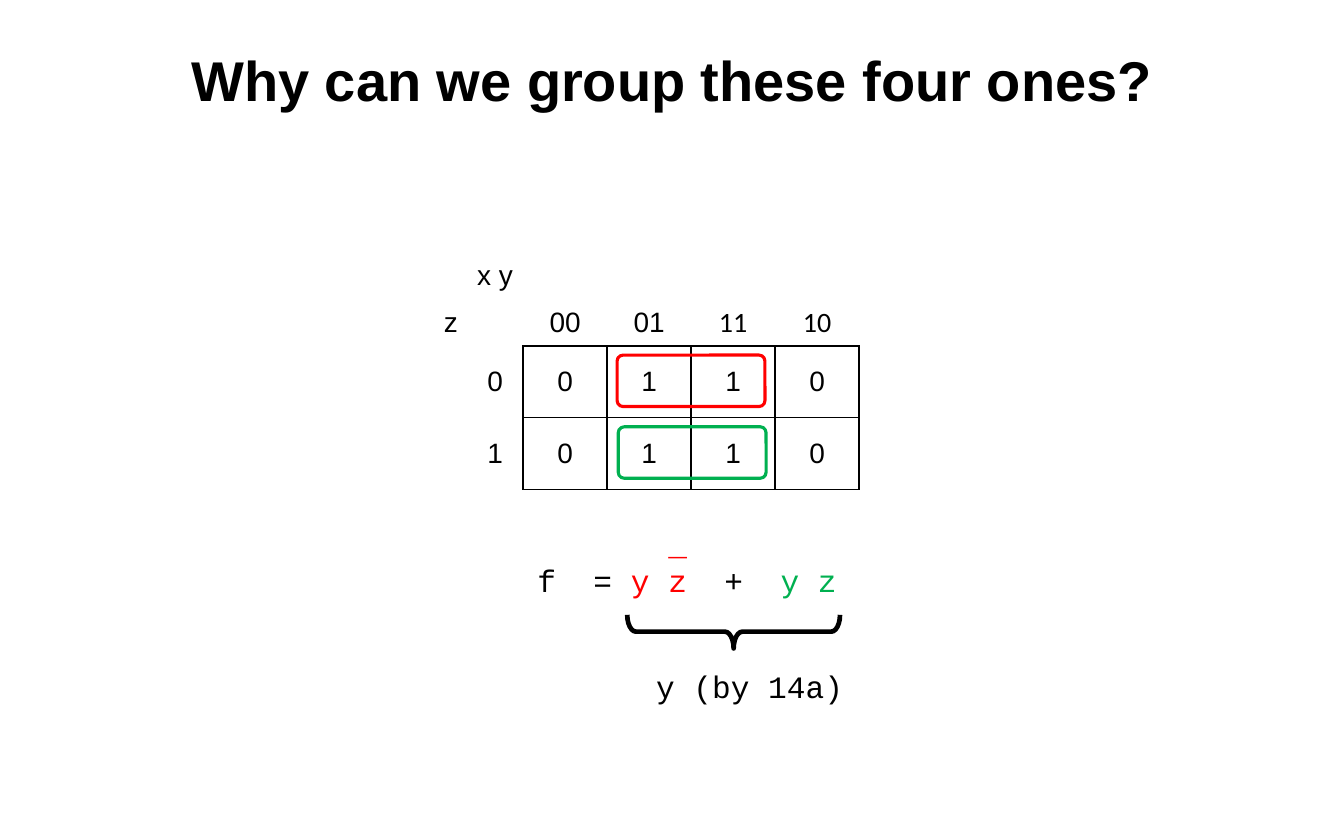
from pptx import Presentation
from pptx.dml.color import RGBColor
from pptx.enum.shapes import MSO_SHAPE as SHAPE
from pptx.enum.text import MSO_ANCHOR as ANCHOR, PP_ALIGN as ALIGN
from pptx.oxml.ns import qn
from pptx.util import Inches, Pt
from lxml.etree import SubElement

BLACK, WHITE, RED, GREEN = "000000", "FFFFFF", "FF0000", "00B050"
TITLE = "Why can we group these four ones?"
MAP = [
    ["", "x y", "", "", "", ""],
    ["z", "", "00", "01", "11", "10"],
    ["", "0", "0", "1", "1", "0"],
    ["", "1", "0", "1", "1", "0"],
]
COL_WIDTHS = [0.5, 0.5, 0.75, 0.75, 0.75, 0.75]
ROW_HEIGHTS = [0.42, 0.42, 0.64, 0.64]
CALIBRI_HEADS = ("11", "10")
OVERBAR = [("_", RED)]
FORMULA = [("f  = ", BLACK), ("y z  ", RED), ("+  ", BLACK), ("y z", GREEN)]
RESULT = [("y (by 14a)", BLACK)]
OUTLINES = [
    (SHAPE.ROUNDED_RECTANGLE, (5.94, 2.74, 0.46, 1.32), 270, [0.116], RED, 2),
    (SHAPE.ROUNDED_RECTANGLE, (5.95, 3.38, 0.46, 1.32), 270, [0.116], GREEN, 2),
    (SHAPE.RIGHT_BRACE, (6.4, 4.69, 0.3, 1.9), 90, [0.26, 0.5], BLACK, 3),
]


def rgb(color):
    return RGBColor.from_string(color)


def style(r, size, font, color=BLACK, bold=False):
    r.font.size, r.font.name, r.font.bold = Pt(size), font, bold
    r.font.color.rgb = rgb(color)


def add_runs(p, runs):
    for text, color in runs:
        r = p.add_run()
        r.text = text
        style(r, 20, "Courier New", color)


def add_border(cell, side, color, width):
    ln = SubElement(cell._tc.get_or_add_tcPr(), qn(f"a:ln{side}"), w=str(Pt(width)))
    SubElement(SubElement(ln, qn("a:solidFill")), qn("a:srgbClr"), val=color)


def add_text_box(slide, box):
    tf = slide.shapes.add_textbox(*map(Inches, box)).text_frame
    tf.word_wrap = True
    return tf


def add_map(slide):
    rows, cols = len(MAP), len(COL_WIDTHS)
    table = slide.shapes.add_table(
        rows, cols, Inches(3.67), Inches(2.25),
        Inches(sum(COL_WIDTHS)), Inches(sum(ROW_HEIGHTS))).table
    table.first_row = table.horz_banding = False
    for col, width in zip(table.columns, COL_WIDTHS):
        col.width = Inches(width)
    for row, height in zip(table.rows, ROW_HEIGHTS):
        row.height = Inches(height)
    for i, texts in enumerate(MAP):
        for j, text in enumerate(texts):
            cell = table.cell(i, j)
            edges = {
                "L": (i >= 2 and j >= 2, 1),
                "R": (i >= 2 and j >= 1, 1),
                "T": (i >= 2 and j >= 2, 3 if i == 1 else 1),
                "B": (i >= 1 and j >= 2, 3 if i == 0 else 1),
            }
            for side, (dark, width) in edges.items():
                add_border(cell, side, BLACK if dark else WHITE, width)
            cell.fill.solid()
            cell.fill.fore_color.rgb = rgb(WHITE)
            cell.vertical_anchor = ANCHOR.MIDDLE
            cell.margin_left = Inches(0.21 if text == "z" else 0)
            cell.margin_right = cell.margin_top = cell.margin_bottom = 0
            p = cell.text_frame.paragraphs[0]
            p.text = text
            p.alignment = ALIGN.CENTER
            for r in p.runs:
                style(r, 18, "Calibri" if text in CALIBRI_HEADS else "Arial")


def add_outline(slide, kind, box, rotation, adjustments, color, width):
    sp = slide.shapes.add_shape(kind, *map(Inches, box))
    sp.rotation = rotation
    for i, value in enumerate(adjustments):
        sp.adjustments[i] = value
    sp.shadow.inherit = False
    sp.fill.background()
    sp.line.color.rgb = rgb(color)
    sp.line.width = Pt(width)


def main():
    prs = Presentation()
    prs.slide_width, prs.slide_height = Inches(12), Inches(7.5)
    slide = prs.slides.add_slide(prs.slide_layouts[5])

    title = slide.shapes.title
    title.left, title.top, title.width, title.height = map(Inches, (0, 0.33, 12, 0.75))
    tf = title.text_frame
    tf.text = TITLE
    tf.vertical_anchor = ANCHOR.MIDDLE
    tf.paragraphs[0].alignment = ALIGN.CENTER
    style(tf.paragraphs[0].runs[0], 36, "Arial", bold=True)

    add_map(slide)
    for outline in OUTLINES:
        add_outline(slide, *outline)

    tf = add_text_box(slide, (4.7, 4.63, 3.74, 0.77))
    p = tf.paragraphs[0]
    p._p.get_or_add_pPr().set("marL", str(Inches(1.17)))
    add_runs(p, OVERBAR)
    add_runs(tf.add_paragraph(), FORMULA)

    tf = add_text_box(slide, (5.76, 5.61, 1.89, 0.77))
    tf.vertical_anchor = ANCHOR.BOTTOM
    tf.margin_bottom = Inches(0.09)
    add_runs(tf.paragraphs[0], RESULT)

    prs.save("out.pptx")


if __name__ == "__main__":
    main()
